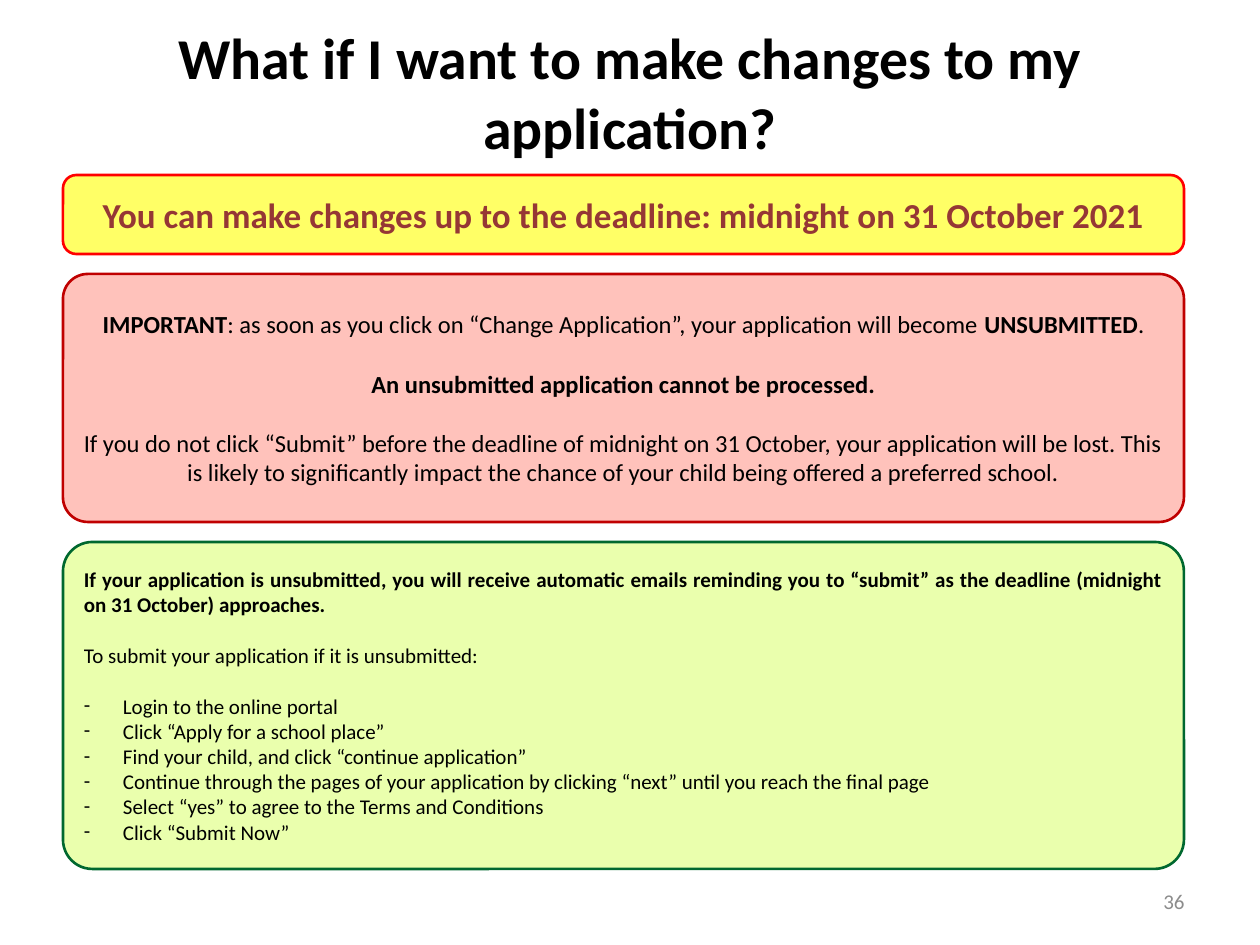
from lxml.etree import SubElement
from pptx import Presentation
from pptx.dml.color import RGBColor
from pptx.enum.shapes import MSO_SHAPE as Shape
from pptx.enum.text import MSO_ANCHOR as Anchor, MSO_AUTO_SIZE as AutoSize, PP_ALIGN as Align
from pptx.oxml.ns import qn
from pptx.util import Emu, Pt

EMU_PER_PX = 914400 / 126
LEFT, PANEL_WIDTH = 63, 1121
BULLET_INDENT = 39
FONT = "Calibri"
COLOURS = {
    "text": "000000", "number": "8C8C8C",
    "deadline_text": "953735", "deadline_fill": "FFFF66", "deadline_line": "FF0000",
    "warning_fill": "FFC2BB", "warning_line": "C00000",
    "steps_fill": "EAFFAD", "steps_line": "00682F",
}
STEPS = [
    "Login to the online portal",
    "Click “Apply for a school place”",
    "Find your child, and click “continue application”",
    "Continue through the pages of your application by clicking “next” until you reach the final page",
    "Select “yes” to agree to the Terms and Conditions",
    "Click “Submit Now”",
]


def px(length):
    return Emu(round(length * EMU_PER_PX))


def colour(name):
    return RGBColor.from_string(COLOURS[name])


def set_frame(frame):
    settings = {"word_wrap": True, "auto_size": AutoSize.NONE, "vertical_anchor": Anchor.MIDDLE}
    for name, value in settings.items():
        setattr(frame, name, value)


def add_bullet(paragraph):
    properties = paragraph._p.get_or_add_pPr()
    properties.set("marL", str(px(BULLET_INDENT)))
    properties.set("indent", str(-px(BULLET_INDENT)))
    SubElement(properties, qn("a:buFont"), typeface=FONT)
    SubElement(properties, qn("a:buChar"), char="-")


def write_paragraphs(frame, paragraphs, size, align=Align.CENTER, text_colour="text"):
    """Each paragraph is (runs, space before in points, bulleted); each run is (text, bold)."""
    set_frame(frame)
    for index, (runs, space, bulleted) in enumerate(paragraphs):
        paragraph = frame.paragraphs[0] if index == 0 else frame.add_paragraph()
        paragraph.alignment = align
        paragraph.space_before = Pt(space)
        if bulleted:
            add_bullet(paragraph)
        for text, bold in runs:
            run = paragraph.add_run()
            run.text = text
            run.font.color.rgb = colour(text_colour)
            for name, value in {"name": FONT, "size": Pt(size), "bold": bold}.items():
                setattr(run.font, name, value)


def add_title(slide, text):
    title = slide.shapes.title
    place = {"left": 63, "top": 28, "width": 1134, "height": 127}
    for name, value in place.items():
        setattr(title, name, px(value))
    write_paragraphs(title.text_frame, [([(text, True)], 0, False)], 33)


def add_panel(slide, name, top, height, corner):
    panel = slide.shapes.add_shape(
        Shape.ROUNDED_RECTANGLE, px(LEFT), px(top), px(PANEL_WIDTH), px(height))
    panel.adjustments[0] = corner
    panel.shadow.inherit = False
    panel.fill.solid()
    panel.fill.fore_color.rgb = colour(f"{name}_fill")
    panel.line.color.rgb = colour(f"{name}_line")
    panel.line.width = Pt(1.5)
    return panel.text_frame


def add_slide_number(slide, number):
    box = slide.shapes.add_textbox(px(903), px(876), px(294), px(50))
    write_paragraphs(box.text_frame, [([(number, False)], 0, False)], 12, Align.RIGHT, "number")


def main():
    presentation = Presentation()
    presentation.slide_width, presentation.slide_height = px(1260), px(945)
    slide = presentation.slides.add_slide(presentation.slide_layouts[5])
    add_title(slide, "What if I want to make changes to my application?")

    deadline = add_panel(slide, "deadline", 175, 79, 0.17)
    write_paragraphs(deadline, [
        ([("You can make changes up to the deadline: midnight on 31 October 2021", True)], 0, False),
    ], 20, text_colour="deadline_text")

    warning = add_panel(slide, "warning", 274, 248, 0.1)
    write_paragraphs(warning, [
        ([("IMPORTANT", True),
          (": as soon as you click on “Change Application”, your application will become ", False),
          ("UNSUBMITTED", True), (".", False)], 0, False),
        ([("An unsubmitted application cannot be processed.", True)], 17, False),
        ([("If you do not click “Submit” before the deadline of midnight on 31 October, "
           "your application will be lost. This is likely to significantly impact the chance "
           "of your child being offered a preferred school.", False)], 17, False),
    ], 14)

    steps = add_panel(slide, "steps", 542, 327, 0.09)
    introduction = [
        ([("If your application is unsubmitted, you will receive automatic emails reminding you "
           "to “submit” as the deadline (midnight on 31 October) approaches.", True)], 0, False),
        ([("To submit your application if it is unsubmitted:", False)], 14.5, False),
    ]
    bullets = [([(step, False)], 0 if index else 14.5, True) for index, step in enumerate(STEPS)]
    write_paragraphs(steps, introduction + bullets, 12, Align.JUSTIFY)

    add_slide_number(slide, "36")
    presentation.save("out.pptx")


if __name__ == "__main__":
    main()
